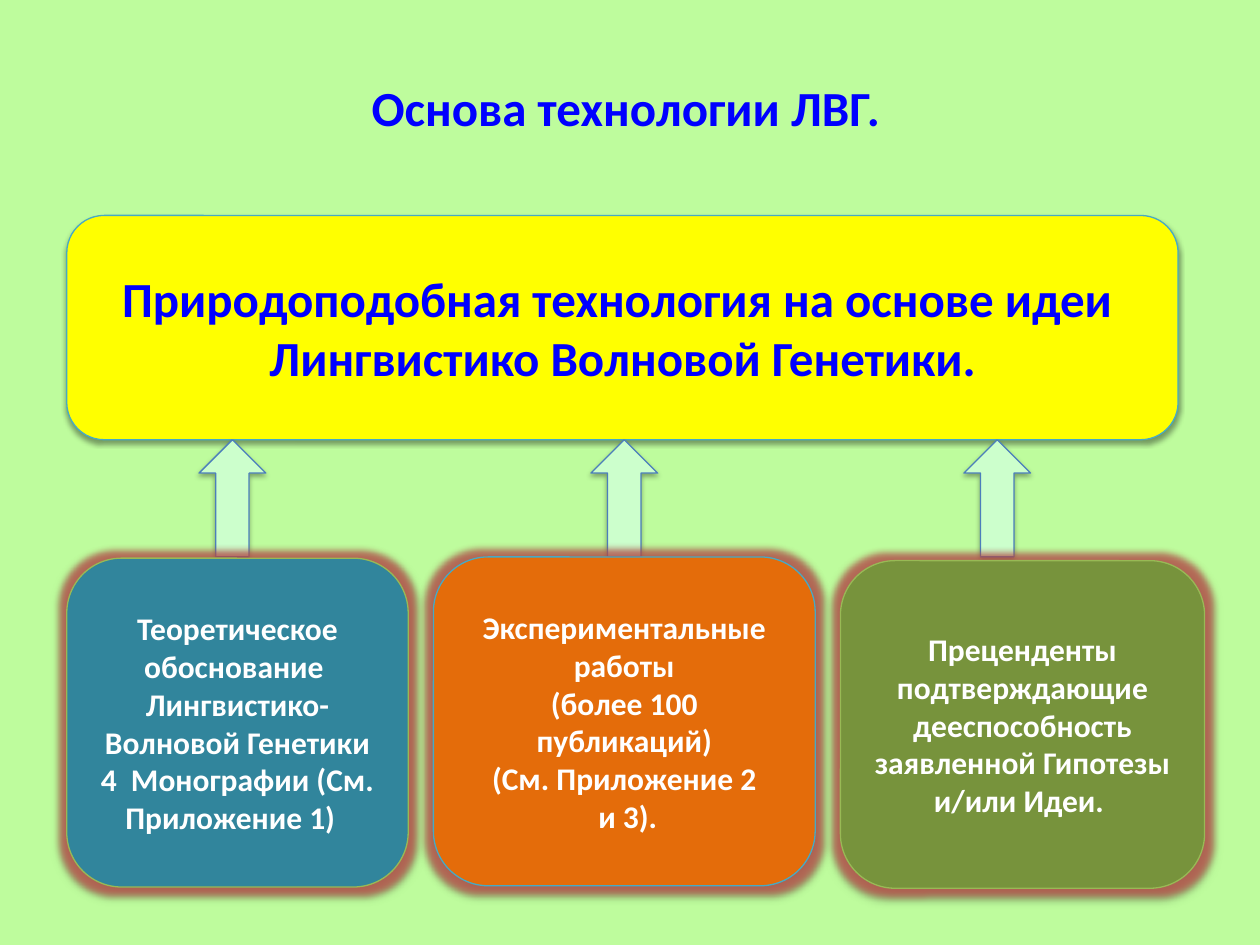
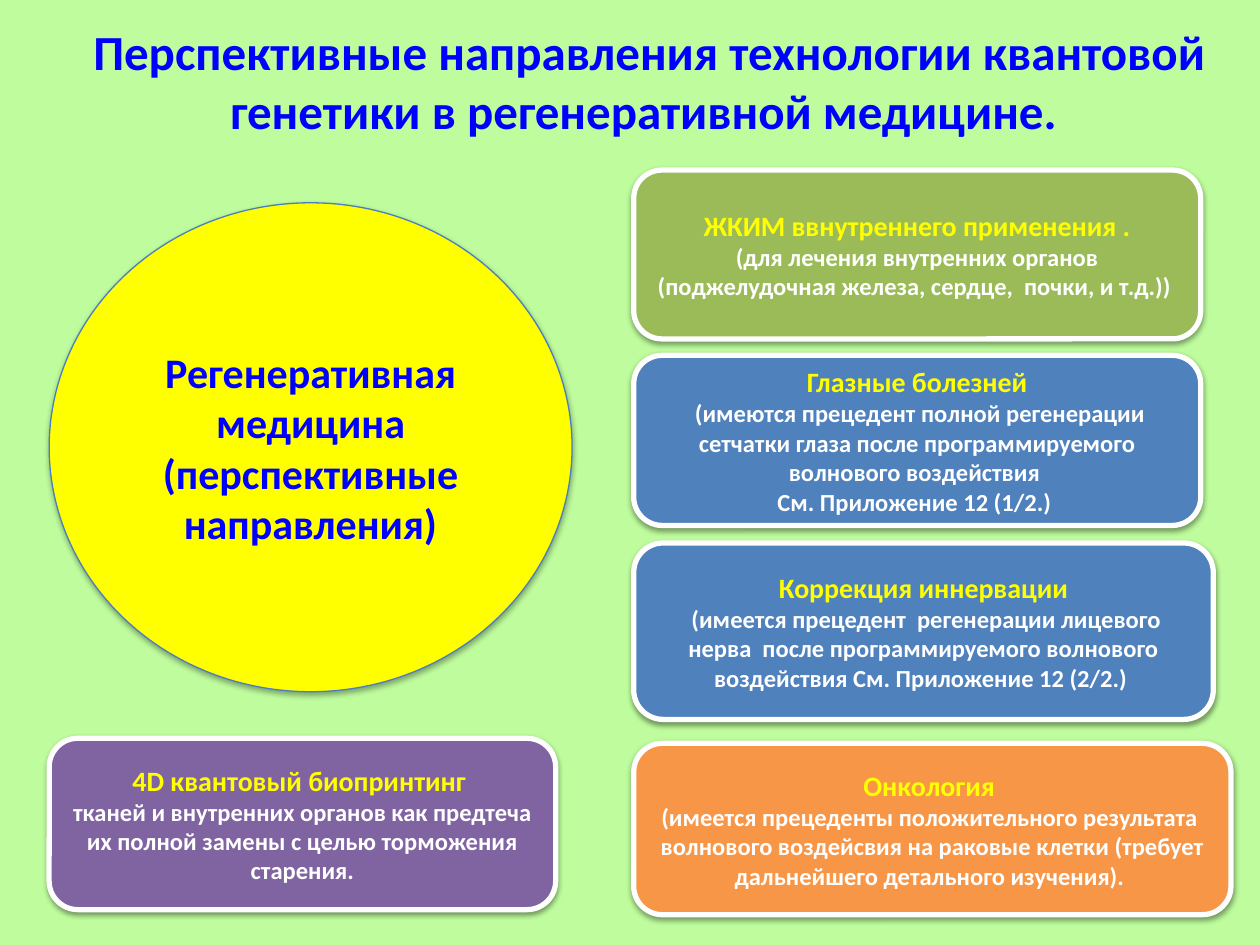
from lxml import etree
from pptx import Presentation
from pptx.dml.color import RGBColor
from pptx.enum import shapes, text
from pptx.oxml import ns
from pptx.util import Inches, Pt

COLOURS = {
    "background": "BEFC9D", "title": "0000FF", "yellow": "FFFF00", "white": "FFFFFF",
    "black": "000000", "glow": "C0504D", "mint": "CCFFCC", "aqua_line": "46AAC5",
    "blue_line": "4B7EBC", "green_line": "98B955", "teal": "31859C", "dark_orange": "E46C0A",
    "dark_green": "77933C", "purple": "8064A2", "green": "9BBB59", "blue": "4F81BD",
    "orange": "F79646",
}
FONT = "Calibri"
ROUNDED = shapes.MSO_SHAPE.ROUNDED_RECTANGLE


def rgb(name):
    return RGBColor.from_string(COLOURS[name])


def add_colour(parent, name, alpha):
    colour = etree.SubElement(parent, ns.qn("a:srgbClr"), val=COLOURS[name])
    etree.SubElement(colour, ns.qn("a:alpha"), val=str(alpha * 1000))


def add_effects(shape, distance, alpha, glow):
    effects = etree.SubElement(shape._element.spPr, ns.qn("a:effectLst"))
    if glow:
        halo = etree.SubElement(effects, ns.qn("a:glow"), rad=str(Pt(8)))
        add_colour(halo, "glow", 75)
    shadow = etree.SubElement(effects, ns.qn("a:outerShdw"), blurRad=str(Pt(3.1)),
                              dist=str(Pt(distance)), dir="5400000", rotWithShape="0")
    add_colour(shadow, "black", alpha)


def write(shape, lines, size=18, colour="white", rest_size=None, rest_colour=None):
    frame = shape.text_frame
    frame.word_wrap = True
    frame.vertical_anchor = text.MSO_ANCHOR.MIDDLE
    for index, line in enumerate(lines):
        paragraph = frame.add_paragraph() if index else frame.paragraphs[0]
        paragraph.alignment = text.PP_ALIGN.CENTER
        run = paragraph.add_run()
        run.text = line
        run.font.name = FONT
        run.font.bold = True
        run.font.size = Pt(rest_size if index and rest_size else size)
        run.font.color.rgb = rgb(rest_colour if index and rest_colour else colour)


def add_block(slide, kind, box, fill, line, width=0.75, distance=1.6, alpha=38, glow=False):
    shape = slide.shapes.add_shape(kind, *map(Inches, box))
    shape.fill.solid()
    shape.fill.fore_color.rgb = rgb(fill)
    shape.line.color.rgb = rgb(line)
    shape.line.width = Pt(width)
    add_effects(shape, distance, alpha, glow)
    return shape


def add_slide(presentation, title, title_box):
    slide = presentation.slides.add_slide(presentation.slide_layouts[6])
    slide.background.fill.solid()
    slide.background.fill.fore_color.rgb = rgb("background")
    write(slide.shapes.add_textbox(*map(Inches, title_box)), [title], size=28, colour="title")
    return slide


def add_idea(slide, box):
    banner = add_block(slide, ROUNDED, box, "yellow", "aqua_line")
    write(banner, ["Природоподобная технология на основе идеи ",
                   " Лингвистико Волновой Генетики. "], size=28, colour="title")


def add_arrows(slide, top, lefts):
    for left in lefts:
        add_block(slide, shapes.MSO_SHAPE.UP_ARROW, (left, top, 0.53, 0.93),
                  "mint", "blue_line", distance=1.8, alpha=35)


def add_pillars(slide):
    pillars = [
        ((0.53, 4.43, 2.71, 2.61), "teal", "green_line",
         ["Теоретическое обоснование ", "Лингвистико-Волновой Генетики",
          "4  Монографии (См. Приложение 1)  "]),
        ((3.44, 4.42, 3.03, 2.61), "dark_orange", "aqua_line",
         ["Экспериментальные работы", "(более 100 публикаций)",
          "(См. Приложение 2", " и 3)."]),
        ((6.67, 4.45, 2.89, 2.6), "dark_green", "green_line",
         ["Преценденты подтверждающие дееспособность заявленной Гипотезы и/или Идеи. "]),
    ]
    for box, fill, line, lines in pillars:
        write(add_block(slide, ROUNDED, box, fill, line, glow=True), lines)


def add_circle(slide, box):
    circle = add_block(slide, shapes.MSO_SHAPE.OVAL, box, "yellow", "blue_line",
                       distance=1.8, alpha=35)
    write(circle, ["Регенеративная медицина", "(перспективные направления)"],
          size=24, colour="title")


def add_direction(slide, box, fill, lines):
    card = add_block(slide, ROUNDED, box, fill, "white", width=3)
    write(card, lines, size=16, colour="yellow", rest_size=14, rest_colour="white")


def build_foundation(presentation):
    slide = add_slide(presentation, "Основа технологии ЛВГ. ", (0.32, 0.27, 9.38, 1.15))
    add_idea(slide, (0.53, 1.71, 8.82, 1.78))
    add_arrows(slide, 3.49, (1.58, 4.69, 7.65))
    add_pillars(slide)


def build_directions(presentation):
    slide = add_slide(
        presentation,
        "Перспективные направления технологии квантовой генетики в регенеративной медицине. ",
        (0.61, 0.24, 9.08, 0.79))
    add_circle(slide, (0.39, 1.61, 4.15, 3.88))
    directions = [
        ((0.39, 5.86, 4.02, 1.36), "purple",
         ["4D квантовый биопринтинг ",
          "тканей и внутренних органов как предтеча их полной замены "
          "с целью торможения старения."]),
        ((5.03, 1.35, 4.5, 1.34), "green",
         ["ЖКИМ ввнутреннего применения .",
          "(для лечения внутренних органов "
          "(поджелудочная железа, сердце,  почки, и т.д.)) "]),
        ((5.03, 2.82, 4.5, 1.35), "blue",
         ["Глазные болезней",
          " (имеются прецедент полной регенерации сетчатки глаза "
          "после программируемого волнового воздействия ",
          "См. Приложение 12 (1/2.) "]),
        ((5.03, 4.31, 4.6, 1.4), "blue",
         ["Коррекция иннервации",
          " (имеется прецедент  регенерации лицевого нерва  "
          "после программируемого волнового воздействия См. Приложение 12 (2/2.) "]),
        ((5.03, 5.9, 4.74, 1.36), "orange",
         ["Онкология ",
          "(имеется прецеденты положительного результата  волнового воздейсвия "
          "на раковые клетки (требует дальнейшего детального изучения). "]),
    ]
    for box, fill, lines in directions:
        add_direction(slide, box, fill, lines)


def main():
    presentation = Presentation()
    presentation.slide_width = Inches(10)
    presentation.slide_height = Inches(7.5)
    build_foundation(presentation)
    build_directions(presentation)
    presentation.save("out.pptx")


if __name__ == "__main__":
    main()
